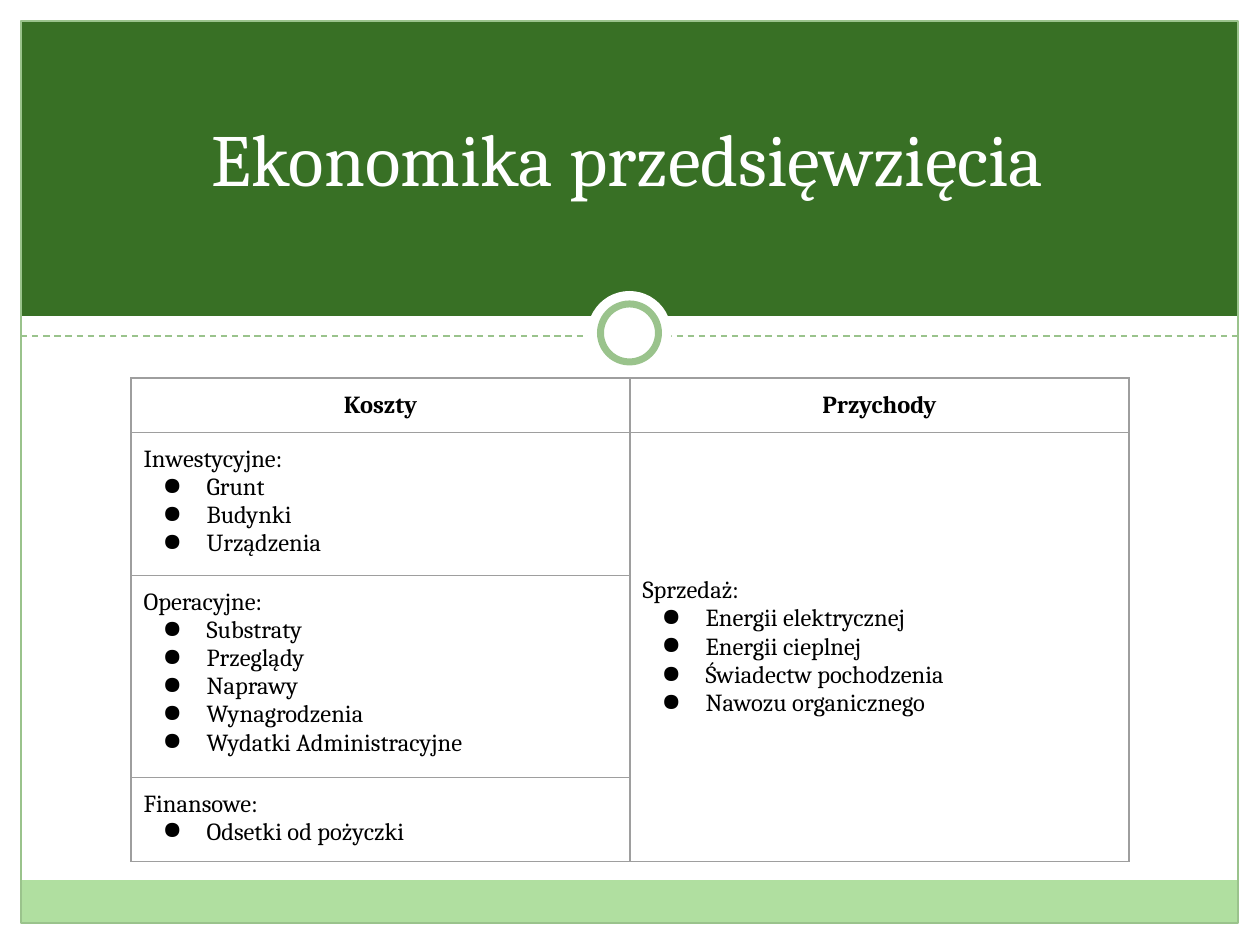
import pptx
import pptx.dml.color
import pptx.enum.dml
import pptx.enum.shapes
import pptx.enum.text
import pptx.oxml
import pptx.oxml.ns
import pptx.util

PX = 914400 / 126
COLORS = {
    "banner": "387025",
    "footer": "B0DFA0",
    "accent": "9AC38C",
    "grid": "9E9E9E",
    "white": "FFFFFF",
    "text": "000000",
}
SHAPE = pptx.enum.shapes.MSO_SHAPE
ALIGN = pptx.enum.text.PP_ALIGN
MIDDLE = pptx.enum.text.MSO_ANCHOR.MIDDLE
TOP = pptx.enum.text.MSO_ANCHOR.TOP

INVESTMENT = ["Inwestycyjne:", "Grunt", "Budynki", "Urządzenia"]
OPERATING = ["Operacyjne:", "Substraty", "Przeglądy", "Naprawy",
             "Wynagrodzenia", "Wydatki Administracyjne"]
FINANCIAL = ["Finansowe:", "Odsetki od pożyczki"]
SALES = ["Sprzedaż:", "Energii elektrycznej", "Energii cieplnej",
         "Świadectw pochodzenia", "Nawozu organicznego"]


def px(length):
    return pptx.util.Emu(round(length * PX))


def rgb(name):
    return pptx.dml.color.RGBColor.from_string(COLORS[name])


def set_all(target, values):
    for name, value in values.items():
        setattr(target, name, value)


def add_run(paragraph, text, size, color, bold=False):
    run = paragraph.add_run()
    run.text = text
    set_all(run.font, {"name": "Cambria", "size": pptx.util.Pt(size), "bold": bold})
    run.font.color.rgb = rgb(color)


def add_shape(slide, kind, box, fill=None, line=None, width=0.75):
    shape = slide.shapes.add_shape(kind, *map(px, box))
    shape.shadow.inherit = False
    if fill:
        shape.fill.solid()
        shape.fill.fore_color.rgb = rgb(fill)
    else:
        shape.fill.background()
    if line:
        shape.line.color.rgb = rgb(line)
        shape.line.width = pptx.util.Pt(width)
    else:
        shape.line.fill.background()


def add_frame(slide, box):
    """Banner, footer band, outline and dashed divider with its ring."""
    left, top, width, height = box
    banner_height, footer_height, divider = 295, 43, top + 315
    center = left + width / 2
    add_shape(slide, SHAPE.RECTANGLE, (left, top, width, banner_height), "banner")
    add_shape(slide, SHAPE.RECTANGLE,
              (left, top + height - footer_height, width, footer_height), "footer")
    add_shape(slide, SHAPE.RECTANGLE, box, line="accent")

    dashes = slide.shapes.add_connector(
        pptx.enum.shapes.MSO_CONNECTOR.STRAIGHT,
        px(left), px(divider), px(left + width), px(divider))
    dashes.line.color.rgb = rgb("accent")
    set_all(dashes.line, {"width": pptx.util.Pt(0.9),
                          "dash_style": pptx.enum.dml.MSO_LINE.DASH})
    properties = dashes._element.spPr
    properties.append(properties.makeelement(pptx.oxml.ns.qn("a:effectLst"), {}))

    for size, line in ((84, None), (58, "accent")):
        ring = (center - size / 2, divider - 3 - size / 2, size, size)
        add_shape(slide, SHAPE.OVAL, ring, "white", line, 4)


def add_title(slide, box, text):
    frame = slide.shapes.add_textbox(*map(px, box)).text_frame
    set_all(frame, {"word_wrap": True, "vertical_anchor": MIDDLE})
    heading = frame.paragraphs[0]
    heading.alignment = ALIGN.CENTER
    add_run(heading, text, 42, "white")


def make_bullet(paragraph):
    properties = paragraph._p.get_or_add_pPr()
    properties.set("marL", str(px(63)))
    properties.set("indent", str(-px(44)))
    namespace = pptx.oxml.ns.nsdecls("a")
    for xml in (f'<a:buClr {namespace}><a:srgbClr val="{COLORS["text"]}"/></a:buClr>',
                f'<a:buChar {namespace} char="●"/>'):
        properties.append(pptx.oxml.parse_xml(xml))


def style_cell(cell):
    sides = ("left", "right", "top", "bottom")
    set_all(cell, {f"margin_{side}": pptx.util.Inches(0.1) for side in sides})
    cell.fill.background()
    properties = cell._tc.get_or_add_tcPr()
    for position, side in enumerate("LRTB"):
        properties.insert(position, pptx.oxml.parse_xml(
            f'<a:ln{side} {pptx.oxml.ns.nsdecls("a")} w="{pptx.util.Pt(0.75)}">'
            f'<a:solidFill><a:srgbClr val="{COLORS["grid"]}"/></a:solidFill>'
            f'</a:ln{side}>'))


def fill_heading(cell, text):
    cell.vertical_anchor = MIDDLE
    paragraph = cell.text_frame.paragraphs[0]
    paragraph.alignment = ALIGN.CENTER
    add_run(paragraph, text, 14, "text", bold=True)


def fill_list(cell, lines, anchor=TOP):
    """First line is a plain lead-in, the others are bullets."""
    cell.vertical_anchor = anchor
    frame = cell.text_frame
    for index, line in enumerate(lines):
        paragraph = frame.add_paragraph() if index else frame.paragraphs[0]
        paragraph.alignment = ALIGN.LEFT
        if index:
            make_bullet(paragraph)
        add_run(paragraph, line, 14, "text")


def add_economics_table(slide, box):
    row_heights = (53, 138, 194, 81)
    table = slide.shapes.add_table(len(row_heights), 2, *map(px, box)).table
    set_all(table, {"first_row": False, "horz_banding": False})
    for column in table.columns:
        column.width = px(box[2] / 2)
    for row, height in zip(table.rows, row_heights):
        row.height = px(height)
    for cell in table.iter_cells():
        style_cell(cell)

    for column, heading in enumerate(("Koszty", "Przychody")):
        fill_heading(table.cell(0, column), heading)
    for row, costs in enumerate((INVESTMENT, OPERATING, FINANCIAL), start=1):
        fill_list(table.cell(row, 0), costs)
    revenue = table.cell(1, 1)
    revenue.merge(table.cell(3, 1))
    fill_list(revenue, SALES, MIDDLE)


def main():
    presentation = pptx.Presentation()
    set_all(presentation, {"slide_width": px(1260), "slide_height": px(945)})
    slide = presentation.slides.add_slide(presentation.slide_layouts[6])
    add_frame(slide, (21, 21, 1217, 902))
    add_title(slide, (29, 33, 1197, 248), "Ekonomika przedsięwzięcia")
    add_economics_table(slide, (131, 378, 998, 466))
    presentation.save("out.pptx")


if __name__ == "__main__":
    main()
